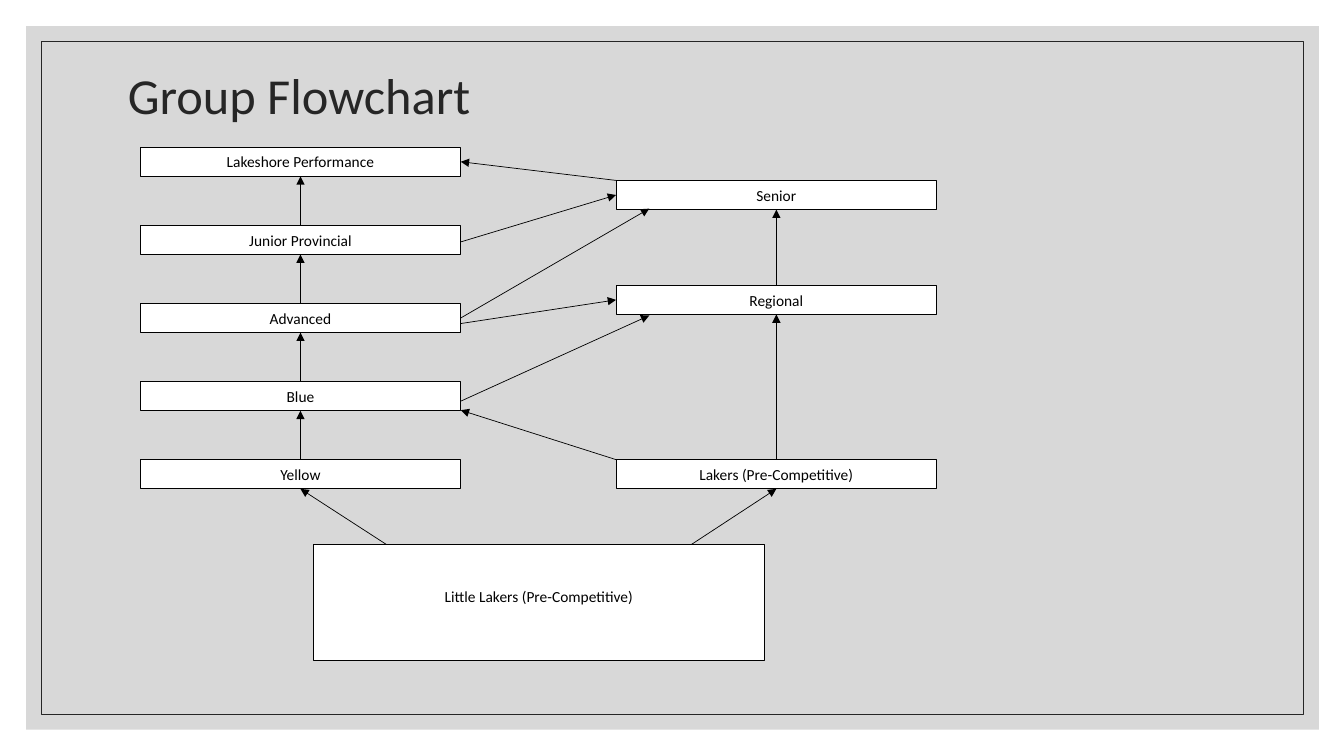
from lxml import etree
from pptx import Presentation
from pptx.dml.color import RGBColor
from pptx.enum.shapes import MSO_CONNECTOR, MSO_SHAPE
from pptx.enum.text import MSO_ANCHOR, PP_ALIGN
from pptx.oxml.ns import qn
from pptx.util import Inches, Pt

RECT, STRAIGHT = MSO_SHAPE.RECTANGLE, MSO_CONNECTOR.STRAIGHT
TOP, MIDDLE = MSO_ANCHOR.TOP, MSO_ANCHOR.MIDDLE
LEFT, CENTER = PP_ALIGN.LEFT, PP_ALIGN.CENTER
N, W, S, E = range(4)  # connection sites of a rectangle

TITLE = "Group Flowchart"
LADDER = ["Lakeshore Performance", "Junior Provincial", "Advanced", "Blue", "Yellow"]
SIDE_GROUPS = {"Senior": 1.79, "Regional": 2.83, "Lakers (Pre-Competitive)": 4.56}
ENTRY = "Little Lakers (Pre-Competitive)"
LAKERS = "Lakers (Pre-Competitive)"

LADDER_X, LADDER_TOP, LADDER_STEP = 1.39, 1.46, 0.775
SIDE_X, BOX_W, BOX_H = 6.11, 3.18, 0.29
ENTRY_BOX = (3.11, 5.4, 4.47, 1.15)

# Each end is (group, site) or a free (x, y) point in inches.
CLIMBS = [((low, N), (high, S)) for high, low in zip(LADDER, LADDER[1:])]
ARROWS = CLIMBS + [
    (("Regional", N), ("Senior", S)),
    ((LAKERS, N), ("Regional", S)),
    ((4.57, 3.98), (6.44, 3.13)),
    ((4.57, 3.21), ("Regional", W)),
    (("Advanced", E), (6.44, 2.07)),
    ((4.57, 2.4), ("Senior", W)),
    ((6.11, 1.79), ("Lakeshore Performance", E)),
    ((6.11, 4.56), (4.57, 4.07)),
    ((3.83, 5.4), ("Yellow", S)),
    ((6.86, 5.4), (LAKERS, S)),
]

THEME = {
    "font": "Calibri",
    "ink": RGBColor(0x00, 0x00, 0x00),
    "title": RGBColor(0x26, 0x26, 0x26),
    "box": RGBColor(0xFF, 0xFF, 0xFF),
    "panel": RGBColor(0xBF, 0xBF, 0xBF),
    "title_size": Pt(36),
    "box_size": Pt(11),
    "box_line": Pt(0.75),
    "thin_line": Pt(0.5),
}


def add_rect(slide, at, fill=None, line=None, width=None):
    sp = slide.shapes.add_shape(RECT, *map(Inches, at))
    sp.shadow.inherit = False
    if fill is None:
        sp.fill.background()
    else:
        sp.fill.solid()
        sp.fill.fore_color.rgb = fill
    if line is None:
        sp.line.fill.background()
    else:
        sp.line.color.rgb = line
        sp.line.width = width
    return sp


def write(sp, text, size, color, align, **frame):
    tf = sp.text_frame
    for name, value in {"word_wrap": True, **frame}.items():
        setattr(tf, name, value)
    p = tf.paragraphs[0]
    p.alignment = align
    r = p.add_run()
    r.text = text
    for name, value in {"name": THEME["font"], "size": size}.items():
        setattr(r.font, name, value)
    r.font.color.rgb = color
    return p


def add_group(slide, text, at, **frame):
    sp = add_rect(slide, at, THEME["box"], THEME["ink"], THEME["box_line"])
    write(sp, text, THEME["box_size"], THEME["ink"], CENTER, **frame)
    return sp


def add_arrow(slide, start, end, groups):
    points = [(0, 0) if e[0] in groups else e for e in (start, end)]
    cx = slide.shapes.add_connector(STRAIGHT, *(Inches(v) for pt in points for v in pt))
    for (group, site), connect in ((start, cx.begin_connect), (end, cx.end_connect)):
        if group in groups:
            connect(groups[group], site)
    cx.line.color.rgb = THEME["ink"]
    cx.line.width = THEME["thin_line"]
    etree.SubElement(cx.line._get_or_add_ln(), qn("a:tailEnd"), type="triangle")
    etree.SubElement(cx._element.spPr, qn("a:effectLst"))


def main():
    prs = Presentation()
    prs.slide_width, prs.slide_height = Inches(13.33), Inches(7.5)
    slide = prs.slides.add_slide(prs.slide_layouts[6])

    panel = add_rect(slide, (0.26, 0.26, 12.82, 6.98), THEME["panel"])
    color = panel._element.spPr.find(qn("a:solidFill"))[0]
    etree.SubElement(color, qn("a:alpha"), val="60000")
    add_rect(slide, (0.41, 0.41, 12.52, 6.68), None, THEME["title"], THEME["thin_line"])

    title = slide.shapes.add_textbox(*map(Inches, (1.17, 0.22, 11, 1.5)))
    p = write(title, TITLE, THEME["title_size"], THEME["title"], LEFT,
              vertical_anchor=MIDDLE)
    p.line_spacing = 0.9

    places = {name: (LADDER_X, LADDER_TOP + i * LADDER_STEP)
              for i, name in enumerate(LADDER)}
    places.update({name: (SIDE_X, y) for name, y in SIDE_GROUPS.items()})
    groups = {name: add_group(slide, name, (x, y, BOX_W, BOX_H), vertical_anchor=MIDDLE)
              for name, (x, y) in places.items()}
    add_group(slide, ENTRY, ENTRY_BOX, vertical_anchor=TOP, margin_top=Inches(0.42))

    for start, end in ARROWS:
        add_arrow(slide, start, end, groups)
    prs.save("out.pptx")


if __name__ == "__main__":
    main()
